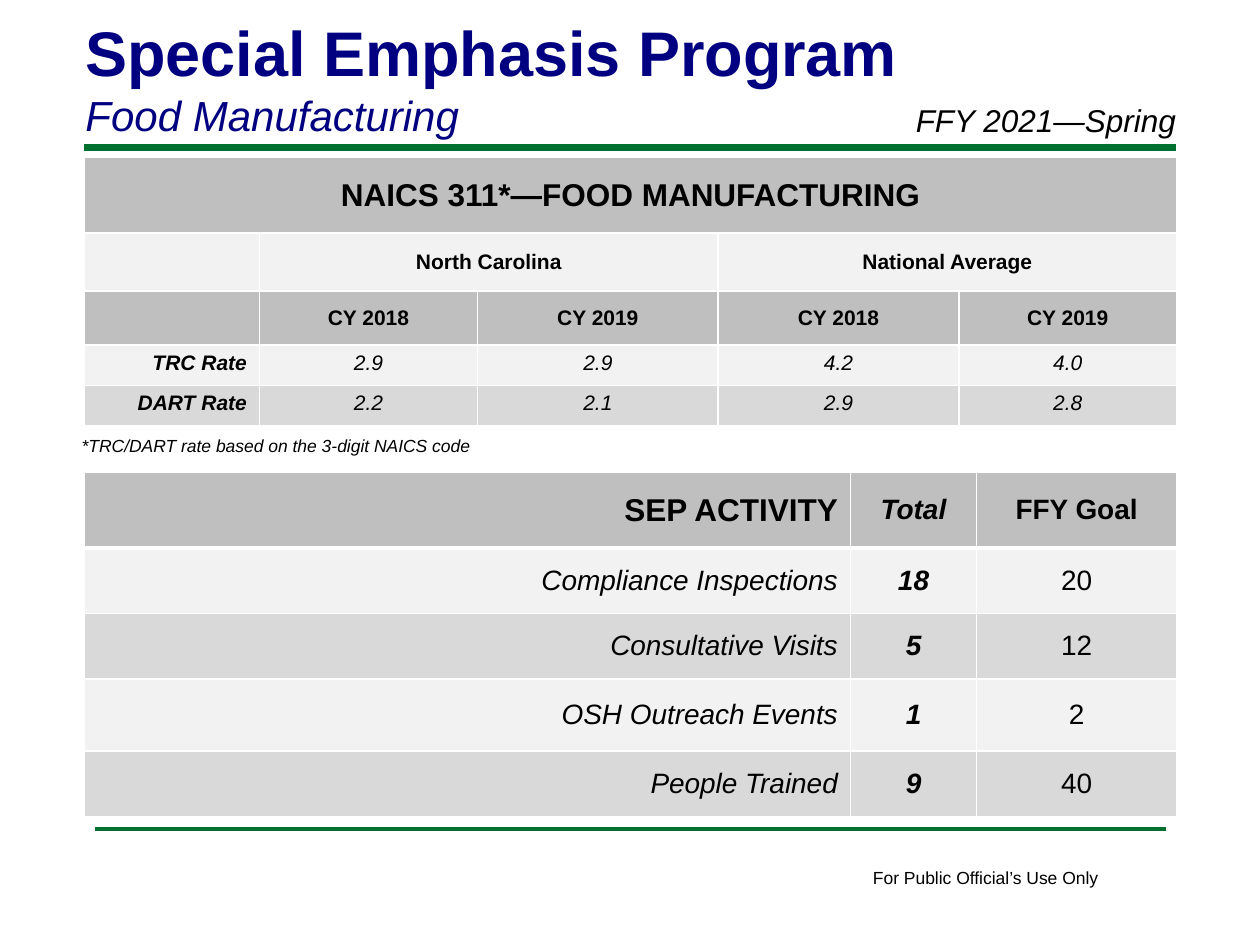
from dataclasses import dataclass

from lxml.etree import SubElement
from pptx import Presentation
from pptx.dml.color import RGBColor
from pptx.enum.shapes import MSO_CONNECTOR
from pptx.enum.text import MSO_ANCHOR, PP_ALIGN
from pptx.oxml.ns import qn
from pptx.util import Inches, Pt

NAVY, GREEN, BLACK, WHITE = "000080", "007030", "000000", "FFFFFF"
HEADER, LIGHT, MEDIUM = "BFBFBF", "F2F2F2", "D9D9D9"


@dataclass(frozen=True)
class Style:
    size: float
    bold: bool = False
    italic: bool = False
    color: str = BLACK
    align: PP_ALIGN = PP_ALIGN.LEFT


@dataclass(frozen=True)
class Entry:
    text: str
    style: Style
    span: int = 1


@dataclass(frozen=True)
class Row:
    height: float
    fill: str
    entries: tuple
    anchor: MSO_ANCHOR = MSO_ANCHOR.MIDDLE
    rule: float = 1


def rgb(value: str) -> RGBColor:
    return RGBColor.from_string(value)


def write(paragraph, text: str, style: Style) -> None:
    paragraph.text = text
    paragraph.alignment = style.align
    font = paragraph.font
    font.name = "Arial"
    font.size = Pt(style.size)
    font.bold = style.bold
    font.italic = style.italic
    font.color.rgb = rgb(style.color)


def add_text(slide, left: float, top: float, width: float, height: float,
             lines: list, wrap: bool = True) -> None:
    frame = slide.shapes.add_textbox(
        Inches(left), Inches(top), Inches(width), Inches(height)).text_frame
    frame.word_wrap = wrap
    for index, (text, style) in enumerate(lines):
        paragraph = frame.add_paragraph() if index else frame.paragraphs[0]
        write(paragraph, text, style)


def add_rule(slide, left: float, right: float, y: float, weight: float) -> None:
    rule = slide.shapes.add_connector(
        MSO_CONNECTOR.STRAIGHT, Inches(left), Inches(y), Inches(right), Inches(y))
    rule.line.color.rgb = rgb(GREEN)
    rule.line.width = Pt(weight)
    SubElement(rule._element.spPr, qn("a:effectLst"))


def add_borders(cell, top: float, bottom: float) -> None:
    properties = cell._tc.get_or_add_tcPr()
    for side, weight in (("L", 1), ("R", 1), ("T", top), ("B", bottom)):
        border = SubElement(properties, qn(f"a:ln{side}"), w=str(Pt(weight)))
        fill = SubElement(border, qn("a:solidFill"))
        SubElement(fill, qn("a:srgbClr"), val=WHITE)


def add_grid(slide, left: float, top: float, widths: list, rows: list) -> None:
    table = slide.shapes.add_table(
        len(rows), len(widths), Inches(left), Inches(top), Inches(sum(widths)),
        Inches(sum(row.height for row in rows))).table
    table.first_row = table.horz_banding = False
    for column, width in zip(table.columns, widths):
        column.width = Inches(width)
    rule_above = 1
    for r, row in enumerate(rows):
        table.rows[r].height = Inches(row.height)
        for c in range(len(widths)):
            cell = table.cell(r, c)
            add_borders(cell, rule_above, row.rule)
            cell.fill.solid()
            cell.fill.fore_color.rgb = rgb(row.fill)
            cell.vertical_anchor = row.anchor
        rule_above = row.rule
        c = 0
        for entry in row.entries:
            cell = table.cell(r, c)
            if entry.span > 1:
                cell.merge(table.cell(r, c + entry.span - 1))
            if entry.text:
                write(cell.text_frame.paragraphs[0], entry.text, entry.style)
            c += entry.span


CENTER, RIGHT = PP_ALIGN.CENTER, PP_ALIGN.RIGHT
NOTE = Style(10, italic=True)
RATE_HEADING = Style(12, bold=True, align=CENTER)
RATE_LABEL = Style(12, bold=True, italic=True, align=RIGHT)
RATE_VALUE = Style(12, italic=True, align=CENTER)
ACTIVITY_LABEL = Style(16, italic=True, align=RIGHT)
TOTAL = Style(16, bold=True, italic=True, align=CENTER)
GOAL = Style(16, align=CENTER)


def rate_row(fill: str, label: str, *values: str) -> Row:
    entries = (Entry(label, RATE_LABEL), *(Entry(v, RATE_VALUE) for v in values))
    return Row(0.32, fill, entries, MSO_ANCHOR.TOP)


def activity_row(height: float, fill: str, label: str, total: str, goal: str) -> Row:
    return Row(height, fill, (
        Entry(label, ACTIVITY_LABEL), Entry(total, TOTAL), Entry(goal, GOAL)))


def main() -> None:
    presentation = Presentation()
    presentation.slide_width, presentation.slide_height = Inches(10), Inches(7.5)
    slide = presentation.slides.add_slide(presentation.slide_layouts[6])

    add_rule(slide, 0.67, 9.33, 1.17, 4)
    add_rule(slide, 0.75, 9.25, 6.58, 2)
    add_text(slide, 6.83, 6.83, 2.01, 0.27,
             [("For Public Official’s Use Only", Style(10))], wrap=False)
    add_text(slide, 0.58, 0.06, 8.25, 1.11, [
        ("Special Emphasis Program", Style(36, bold=True, color=NAVY)),
        ("Food Manufacturing", Style(24, italic=True, color=NAVY)),
    ])

    add_grid(slide, 0.67, 3.75, [6.08, 1, 1.59], [
        Row(0.6, HEADER, (
            Entry("SEP ACTIVITY", Style(18, bold=True, align=RIGHT)),
            Entry("Total", TOTAL),
            Entry("FFY Goal", Style(16, bold=True, align=CENTER))), rule=3),
        activity_row(0.52, LIGHT, "Compliance Inspections", "18", "20"),
        activity_row(0.52, MEDIUM, "Consultative Visits", "5", "12"),
        activity_row(0.57, LIGHT, "OSH Outreach Events", "1", "2"),
        activity_row(0.52, MEDIUM, "People Trained", "9", "40"),
    ])

    blank = Entry("", RATE_HEADING)
    years = [Entry(year, RATE_HEADING) for year in ("CY 2018", "CY 2019")]
    add_grid(slide, 0.67, 1.25, [1.39, 1.73, 1.91, 1.91, 1.73], [
        Row(0.6, HEADER, (Entry("NAICS 311*—FOOD MANUFACTURING",
                                Style(18, bold=True, align=CENTER), 5),)),
        Row(0.46, LIGHT, (blank, Entry("North Carolina", RATE_HEADING, 2),
                          Entry("National Average", RATE_HEADING, 2))),
        Row(0.43, HEADER, (blank, *years * 2)),
        rate_row(LIGHT, "TRC Rate", "2.9", "2.9", "4.2", "4.0"),
        rate_row(MEDIUM, "DART Rate", "2.2", "2.1", "2.9", "2.8"),
    ])

    add_text(slide, 0.55, 3.4, 3.38, 0.27,
             [("*TRC/DART rate based on the 3-digit NAICS code", NOTE)], wrap=False)
    add_text(slide, 7.17, 0.75, 2.5, 0.4,
             [("FFY 2021—Spring", Style(18, italic=True))])
    presentation.save("out.pptx")


if __name__ == "__main__":
    main()
